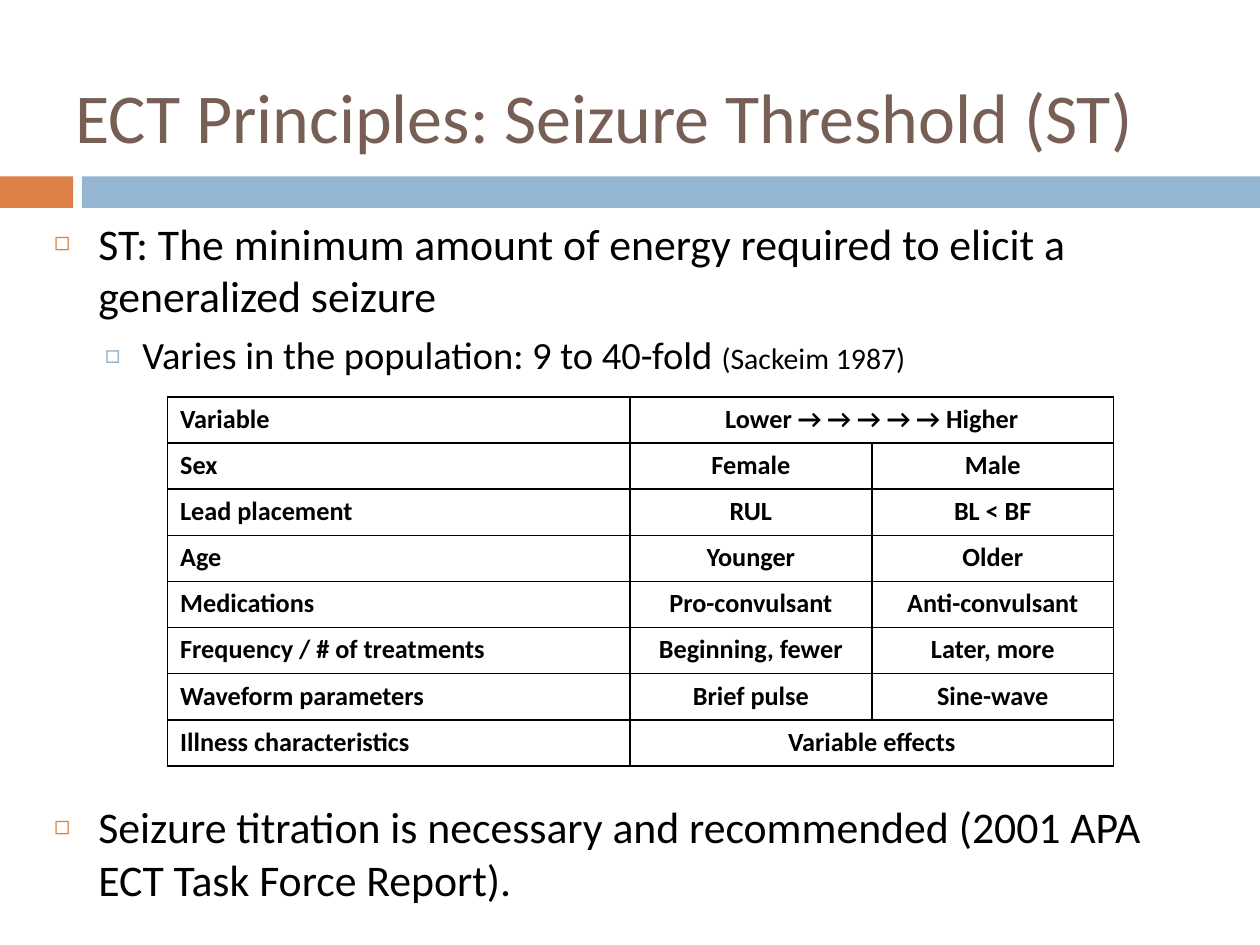
import pptx
import pptx.dml.color
import pptx.enum.shapes
import pptx.enum.text
import pptx.oxml
import pptx.oxml.ns
import pptx.util

Inches = pptx.util.Inches
Pt = pptx.util.Pt
Align = pptx.enum.text.PP_ALIGN
Anchor = pptx.enum.text.MSO_ANCHOR

COLORS = {"title": "775F55", "text": "000000", "orange": "DD8047", "blue": "94B6D2"}

# Bullet levels: left margin and hanging indent in inches, mark size in percent
LEVELS = [
    {"margin": 0.35, "hang": 0.35, "mark": "◻", "color": "orange", "percent": 60},
    {"margin": 0.7, "hang": 0.3, "mark": "□", "color": "blue", "percent": 70},
]

# Level, space before in points, runs of (text, size); the last gap clears the table
POINTS = [
    (0, 7, [("ST: The minimum amount of energy required to elicit a generalized seizure", 25)]),
    (1, 5.5, [("Varies in the population: 9 to 40-fold ", 22), ("(Sackeim 1987)", 17)]),
    (0, 241.5, [("Seizure titration is necessary and recommended "
                 "(2001 APA ECT Task Force Report).", 25)]),
]

# A row with two entries spans its second one over both value columns
FACTORS = [
    ["Variable", "Lower → → → → → Higher"],
    ["Sex", "Female", "Male"],
    ["Lead placement", "RUL", "BL < BF"],
    ["Age", "Younger", "Older"],
    ["Medications", "Pro-convulsant", "Anti-convulsant"],
    ["Frequency / # of treatments", "Beginning, fewer", "Later, more"],
    ["Waveform parameters", "Brief pulse", "Sine-wave"],
    ["Illness characteristics", "Variable effects"],
]


def rgb(name):
    return pptx.dml.color.RGBColor.from_string(COLORS[name])


def set_all(target, values):
    for name, value in values.items():
        setattr(target, name, value)


def append_xml(parent, tag, content="", attributes=""):
    namespace = pptx.oxml.ns.nsdecls("a")
    parent.append(pptx.oxml.parse_xml(
        f"<a:{tag} {namespace} {attributes}>{content}</a:{tag}>"))


def color_xml(name):
    return f'<a:srgbClr val="{COLORS[name]}"/>'


class SlideBuilder:
    font = "Calibri"

    def __init__(self, page):
        self.page = page

    def place(self, box, left, top, width, height):
        set_all(box, {"left": Inches(left), "top": Inches(top),
                      "width": Inches(width), "height": Inches(height)})

    def add_span(self, para, text, size, color="text", bold=False):
        span = para.add_run()
        span.text = text
        set_all(span.font, {"name": self.font, "size": Pt(size), "bold": bold})
        span.font.color.rgb = rgb(color)

    def bar(self, left, top, width, height, color):
        box = self.page.shapes.add_shape(
            pptx.enum.shapes.MSO_SHAPE.RECTANGLE,
            Inches(left), Inches(top), Inches(width), Inches(height))
        box.shadow.inherit = False
        box.fill.solid()
        box.fill.fore_color.rgb = rgb(color)
        box.line.fill.background()

    def title(self, text, *area):
        box = self.page.shapes.title
        self.place(box, *area)
        set_all(box.text_frame, {"vertical_anchor": Anchor.MIDDLE, "word_wrap": True,
                                 "auto_size": pptx.enum.text.MSO_AUTO_SIZE.NONE})
        para = box.text_frame.paragraphs[0]
        para.alignment = Align.LEFT
        self.add_span(para, text, 40, "title")

    def bullets(self, points, *area):
        box = self.page.placeholders[1]
        self.place(box, *area)
        frame = box.text_frame
        set_all(frame, {"vertical_anchor": Anchor.TOP, "word_wrap": True,
                        "auto_size": pptx.enum.text.MSO_AUTO_SIZE.NONE})
        for index, (level, gap, spans) in enumerate(points):
            para = frame.add_paragraph() if index else frame.paragraphs[0]
            set_all(para, {"level": level, "space_before": Pt(gap), "alignment": Align.LEFT})
            self.mark(para, LEVELS[level])
            for text, size in spans:
                self.add_span(para, text, size)

    def mark(self, para, style):
        props = para._p.get_or_add_pPr()
        props.set("marL", str(Inches(style["margin"])))
        props.set("indent", str(-Inches(style["hang"])))
        append_xml(props, "buClr", color_xml(style["color"]))
        append_xml(props, "buSzPct", attributes=f'val="{style["percent"] * 1000}"')
        append_xml(props, "buFont", attributes=f'typeface="{self.font}"')
        append_xml(props, "buChar", attributes=f'char="{style["mark"]}"')

    def table(self, rows, widths, left, top, height):
        grid = self.page.shapes.add_table(
            len(rows), len(widths), Inches(left), Inches(top),
            Inches(sum(widths)), Inches(height)).table
        set_all(grid, {"first_row": False, "horz_banding": False})
        for column, width in zip(grid.columns, widths):
            column.width = Inches(width)
        for cell in grid.iter_cells():
            self.outline(cell)
        for r, entries in enumerate(rows):
            if len(entries) < len(widths):
                grid.cell(r, 1).merge(grid.cell(r, len(widths) - 1))
            for c, text in enumerate(entries):
                para = grid.cell(r, c).text_frame.paragraphs[0]
                para.alignment = Align.CENTER if c else Align.LEFT
                self.add_span(para, text, 15, bold=True)

    def outline(self, cell):
        props = cell._tc.get_or_add_tcPr()
        for side in ("lnL", "lnR", "lnT", "lnB"):
            append_xml(props, side, f"<a:solidFill>{color_xml('text')}</a:solidFill>",
                       f'w="{Pt(1)}"')
        cell.fill.background()


def main():
    deck = pptx.Presentation()
    set_all(deck, {"slide_width": Inches(10), "slide_height": Inches(7.5)})
    builder = SlideBuilder(deck.slides.add_slide(deck.slide_layouts[1]))

    # Divider bars
    builder.bar(0, 1.4, 0.58, 0.25, "orange")
    builder.bar(0.65, 1.4, 9.35, 0.25, "blue")

    # Title and bullet list
    builder.title("ECT Principles: Seizure Threshold (ST)", 0.5, 0.5, 8.92, 0.83)
    builder.bullets(POINTS, 0.33, 1.67, 9.33, 5.58)

    # Factors that shift the threshold
    builder.table(FACTORS, [3.67, 1.92, 1.92], 1.33, 3.15, 2.93)

    deck.save("out.pptx")


if __name__ == "__main__":
    main()
